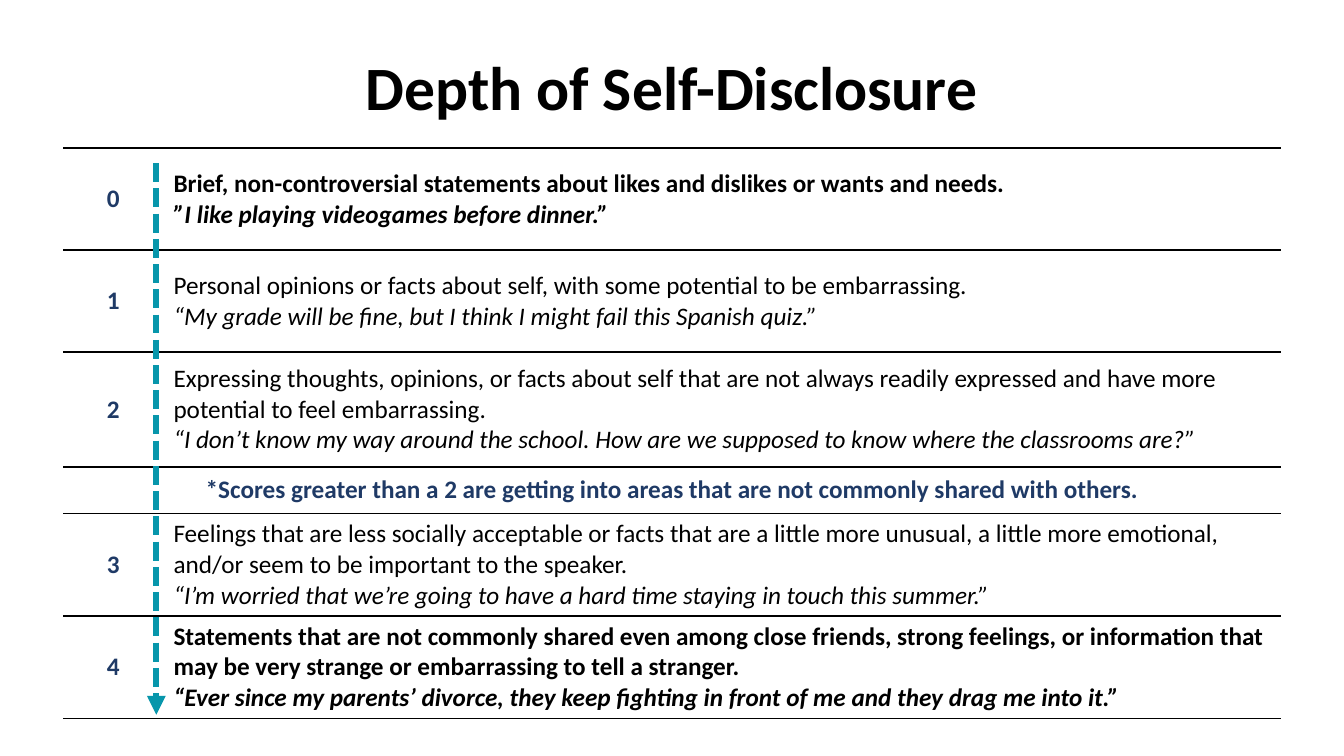
from lxml.etree import SubElement as Sub
from pptx import Presentation
from pptx.dml.color import RGBColor as Rgb
from pptx.enum.dml import MSO_LINE as Dash
from pptx.enum.shapes import MSO_CONNECTOR as Conn
from pptx.enum.text import MSO_ANCHOR as Anchor, PP_ALIGN as Align
from pptx.oxml.ns import qn
from pptx.util import Cm, Pt

HUES = {"ink": "000000", "navy": "1F3A66", "teal": "0796AB", "paper": "FFFFFF"}

# Score, row height in cm, bold, statement, example
LEVELS = [
    ("0", 2.57, True,
     "Brief, non-controversial statements about likes and dislikes or wants and needs.",
     "”I like playing videogames before dinner.”"),
    ("1", 2.57, False,
     "Personal opinions or facts about self, with some potential to be embarrassing.",
     "“My grade will be fine, but I think I might fail this Spanish quiz.”"),
    ("2", 2.9, False,
     "Expressing thoughts, opinions, or facts about self that are not always readily "
     "expressed and have more potential to feel embarrassing.",
     "“I don’t know my way around the school. How are we supposed to know where the "
     "classrooms are?”"),
    ("*Scores greater than a 2 are getting into areas that are not commonly shared "
     "with others.", 1.17, False, None, None),
    ("3", 2.57, False,
     "Feelings that are less socially acceptable or facts that are a little more unusual, "
     "a little more emotional, and/or seem to be important to the speaker.",
     "“I’m worried that we’re going to have a hard time staying in touch this summer.”"),
    ("4", 2.57, True,
     "Statements that are not commonly shared even among close friends, strong feelings, "
     "or information that may be very strange or embarrassing to tell a stranger.",
     "“Ever since my parents’ divorce, they keep fighting in front of me and they drag "
     "me into it.”"),
]


def apply(obj, vals):
    for key, val in vals.items():
        setattr(obj, key, val)


def hue(name):
    return Rgb.from_string(HUES[name])


class Deck:
    face = "Calibri"

    def __init__(self):
        self.prs = Presentation()
        apply(self.prs, {"slide_width": Cm(33.87), "slide_height": Cm(19.05)})
        self.slide = self.prs.slides.add_slide(self.prs.slide_layouts[5])

    def label(self, para, text, tint="ink", **form):
        run = para.add_run()
        run.text = text
        apply(run.font, {"name": self.face, "size": Pt(18), **form})
        run.font.color.rgb = hue(tint)

    def title(self, text, left, top, width, height):
        box = self.slide.shapes.title
        apply(box, {"left": Cm(left), "top": Cm(top),
                    "width": Cm(width), "height": Cm(height)})
        apply(box.text_frame, {"vertical_anchor": Anchor.MIDDLE, "word_wrap": True})
        para = box.text_frame.paragraphs[0]
        apply(para, {"alignment": Align.CENTER, "line_spacing": 0.9})
        self.label(para, text, size=Pt(44), bold=True)

    def rule(self, cell):
        """Lines above and below the cell, none at its sides."""
        props = cell._tc.get_or_add_tcPr()
        for side in "LRTB":
            line = Sub(props, qn(f"a:ln{side}"), w=str(Pt(1)))
            if side in "LR":
                Sub(line, qn("a:noFill"))
            else:
                fill = Sub(line, qn("a:solidFill"))
                Sub(fill, qn("a:srgbClr"), val=HUES["ink"])
        cell.fill.solid()
        cell.fill.fore_color.rgb = hue("paper")
        cell.vertical_anchor = Anchor.MIDDLE

    def table(self, levels, left, top, widths):
        high = sum(level[1] for level in levels)
        grid = self.slide.shapes.add_table(
            len(levels), len(widths), Cm(left), Cm(top),
            Cm(sum(widths)), Cm(high)).table
        apply(grid, {"first_row": False, "horz_banding": False})
        for col, width in zip(grid.columns, widths):
            col.width = Cm(width)
        for num, (score, height, bold, fact, quote) in enumerate(levels):
            grid.rows[num].height = Cm(height)
            mark, body = grid.cell(num, 0), grid.cell(num, 1)
            for cell in (mark, body):
                self.rule(cell)
            para = mark.text_frame.paragraphs[0]
            para.alignment = Align.CENTER
            self.label(para, score, "navy", bold=True, italic=False)
            if fact is None:
                mark.merge(body)
                continue
            frame = body.text_frame
            self.label(frame.paragraphs[0], fact, bold=bold, italic=False)
            self.label(frame.add_paragraph(), quote, bold=bold, italic=True)

    def arrow(self, left, top, end):
        link = self.slide.shapes.add_connector(
            Conn.STRAIGHT, Cm(left), Cm(top), Cm(left), Cm(end))
        apply(link.line, {"width": Pt(4.5), "dash_style": Dash.SQUARE_DOT})
        link.line.color.rgb = hue("teal")
        props = link._element.spPr
        line = props.find(qn("a:ln"))
        line.find(qn("a:prstDash")).set("val", "sysDash")
        Sub(line, qn("a:tailEnd"), type="triangle")
        Sub(props, qn("a:effectLst"))


deck = Deck()
# Heading
deck.title("Depth of Self-Disclosure", 2.33, 0.43, 29.21, 3.68)
# Levels of disclosure
deck.table(LEVELS, 1.59, 3.73, [2.53, 28.17])
# Growing depth
deck.arrow(3.94, 4.11, 18.01)
deck.prs.save("out.pptx")
